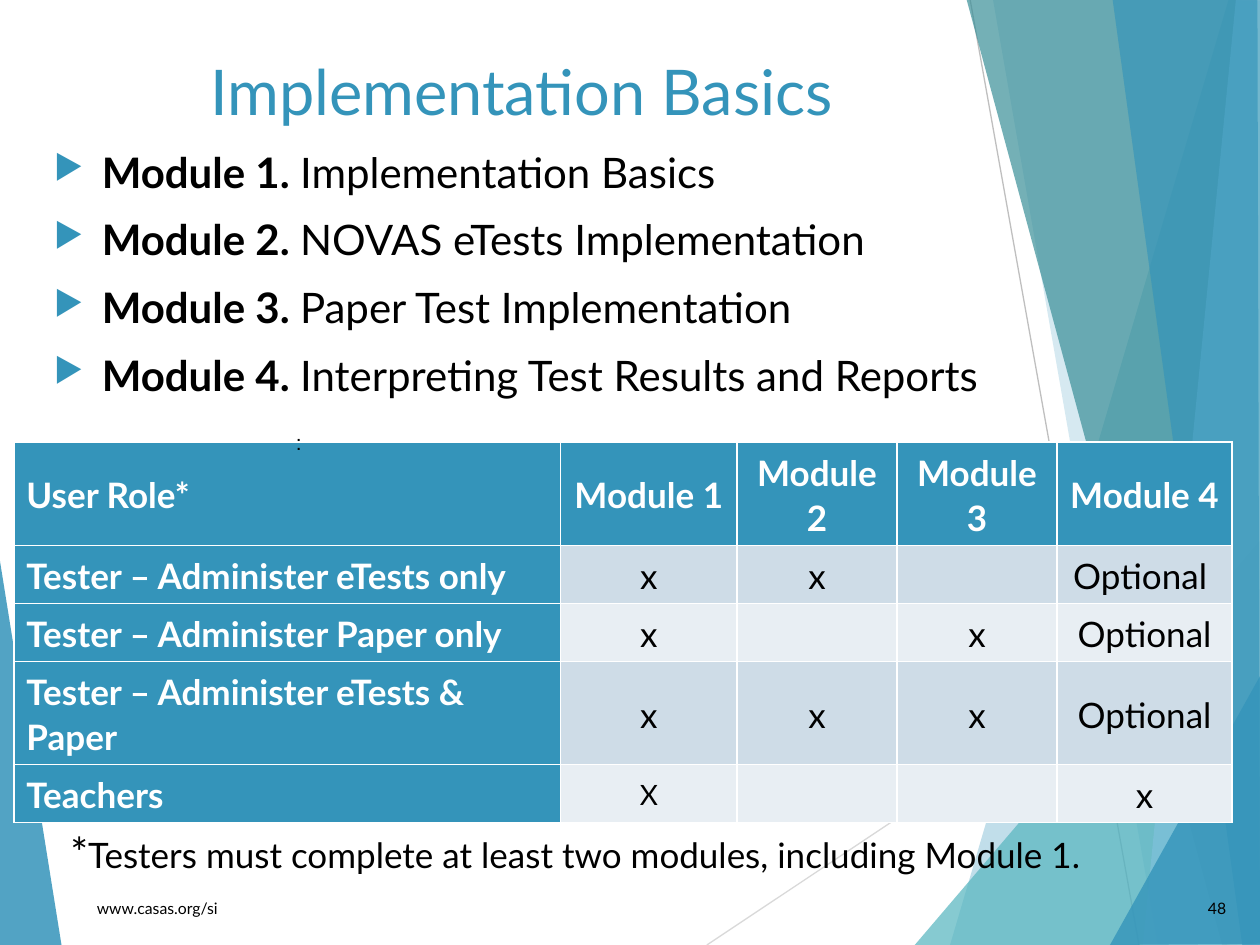
import pptx
import pptx.dml.color
import pptx.enum.shapes
import pptx.enum.text
import pptx.oxml
import pptx.oxml.ns
import pptx.util
from lxml import etree

COLORS = {
    "white": "FFFFFF", "black": "000000", "blue": "3494BA", "teal": "58B6C0",
    "dark teal": "3A8F98", "light blue": "7FC1DB", "light gray": "D9D9D9",
    "gray": "BFBFBF", "odd row": "CEDCE7", "even row": "E8EEF3",
}
FONT = "Lato"
COLUMNS, ROWS = 100, 75  # slide grid, ten units to the inch
LEFT = pptx.enum.text.PP_ALIGN.LEFT
CENTER = pptx.enum.text.PP_ALIGN.CENTER
RIGHT = pptx.enum.text.PP_ALIGN.RIGHT
TOP = pptx.enum.text.MSO_ANCHOR.TOP
MIDDLE = pptx.enum.text.MSO_ANCHOR.MIDDLE

# color, opacity in percent, corners in grid units
LEFT_FACET = ("blue", 85, [(-0.1, 43.9), (4.9, 75.1), (-0.1, 75)])
RIGHT_FACETS = [
    ("blue", 30, [(97.5, 0), (75.4, 75), (100.2, 75.1), (100.1, 0.1)]),
    ("blue", 20, [(78.8, -0.1), (91.9, 75), (100.1, 75), (100.1, -0.1)]),
    ("teal", 72, [(72.6, 75), (100, 42.9), (100.1, 75)]),
    ("dark teal", 70, [(76.7, -0.1), (97, 75), (100.1, 74.9), (100.1, -0.1)]),
    ("light blue", 70, [(98.1, -0.1), (90.7, 75), (100.1, 75), (100, -0.1)]),
    ("blue", 65, [(88.3, -0.1), (98.6, 75), (100, 75), (99.8, -0.1)]),
    ("blue", 80, [(88.1, 75), (100.1, 53.5), (100.1, 74.9)]),
]
MODULES = [
    "Implementation Basics",
    "NOVAS eTests Implementation",
    "Paper Test Implementation",
    "Interpreting Test Results and Reports",
]
ROLE_TABLE = [
    ["User Role*", "Module 1", "Module 2", "Module 3", "Module 4"],
    ["Tester – Administer eTests only", "x", "x", "", "Optional "],
    ["Tester – Administer Paper only", "x", "", "x", "Optional"],
    ["Tester – Administer eTests & Paper", "x", "x", "x", "Optional"],
    ["Teachers", "X", "", "", "x"],
]


def grid(units):
    return pptx.util.Inches(units / 10)


def rgb(name):
    return pptx.dml.color.RGBColor.from_string(COLORS[name])


def style_font(font, size, color="black", name=FONT, bold=None):
    font.name = name
    font.size = pptx.util.Pt(size)
    font.bold = bold
    font.color.rgb = rgb(color)


def add_facet(slide, color, opacity, corners):
    points = [(grid(x), grid(y)) for x, y in corners]
    builder = slide.shapes.build_freeform(*points[0])
    builder.add_line_segments(points[1:], close=True)
    shape = builder.convert_to_shape()
    shape.shadow.inherit = False
    shape.fill.solid()
    shape.fill.fore_color.rgb = rgb(color)
    shape.line.fill.background()
    color_element = shape.fill._xPr.find(".//" + pptx.oxml.ns.qn("a:srgbClr"))
    etree.SubElement(color_element, pptx.oxml.ns.qn("a:alpha"), val=str(opacity * 1000))


def add_thin_line(slide, color, start, end):
    ends = [grid(units) for units in (*start, *end)]
    line = slide.shapes.add_connector(pptx.enum.shapes.MSO_CONNECTOR.STRAIGHT, *ends)
    line.line.color.rgb = rgb(color)
    line.line.width = pptx.util.Pt(0.75)
    etree.SubElement(line._element.spPr, pptx.oxml.ns.qn("a:effectLst"))


def add_text_frame(slide, area, anchor=TOP, wrap=True):
    frame = slide.shapes.add_textbox(*map(grid, area)).text_frame
    frame.word_wrap = wrap
    frame.vertical_anchor = anchor
    return frame


def set_indent(paragraph, left, first=0):
    properties = paragraph._p.get_or_add_pPr()
    properties.set("marL", str(grid(left)))
    properties.set("indent", str(grid(first)))


def add_label(slide, area, text, size, color="black", font=FONT, align=LEFT,
              anchor=MIDDLE, wrap=True, indent=0):
    paragraph = add_text_frame(slide, area, anchor, wrap).paragraphs[0]
    set_indent(paragraph, indent)
    paragraph.alignment = align
    paragraph.add_run().text = text
    style_font(paragraph.font, size, color, font)


def add_bullet(paragraph):
    properties = paragraph._p.get_or_add_pPr()
    color = etree.SubElement(properties, pptx.oxml.ns.qn("a:buClr"))
    etree.SubElement(color, pptx.oxml.ns.qn("a:srgbClr"), val=COLORS["blue"])
    etree.SubElement(properties, pptx.oxml.ns.qn("a:buSzPct"), val="80000")
    etree.SubElement(properties, pptx.oxml.ns.qn("a:buChar"), char="▶")


def add_module_list(slide, area):
    frame = add_text_frame(slide, area)
    for number, name in enumerate(MODULES, start=1):
        paragraph = frame.paragraphs[0] if number == 1 else frame.add_paragraph()
        set_indent(paragraph, 3.8, -3.8)
        add_bullet(paragraph)
        if number > 1:
            paragraph.space_before = pptx.util.Pt(10)
        style_font(paragraph.font, 24)
        label = paragraph.add_run()
        label.text = f"Module {number}. "
        label.font.bold = True
        paragraph.add_run().text = name


def add_footnote(slide, area):
    """The asterisk is larger than the sentence after it."""
    paragraph = add_text_frame(slide, area).paragraphs[0]
    set_indent(paragraph, 2.3)
    sentence = "Testers must complete at least two modules, including Module 1."
    for text, size in (("*", 24), (sentence, 20)):
        run = paragraph.add_run()
        run.text = text
        style_font(run.font, size)


def add_cell_borders(cell):
    properties = cell._tc.get_or_add_tcPr()
    for position, side in enumerate(("a:lnL", "a:lnR", "a:lnT", "a:lnB")):
        border = pptx.oxml.parse_xml(
            f'<{side} {pptx.oxml.ns.nsdecls("a")} w="12700"><a:solidFill>'
            f'<a:srgbClr val="{COLORS["white"]}"/></a:solidFill></{side}>')
        properties.insert(position, border)


def fill_cell(cell, text, row, column):
    is_heading = row == 0 or column == 0
    band = "odd row" if row % 2 else "even row"
    cell.fill.solid()
    cell.fill.fore_color.rgb = rgb("blue" if is_heading else band)
    cell.vertical_anchor = MIDDLE
    add_cell_borders(cell)
    if not text:
        return
    paragraph = cell.text_frame.paragraphs[0]
    paragraph.alignment = CENTER if column else LEFT
    paragraph.line_spacing = 1.07
    paragraph.space_after = pptx.util.Pt(8)
    paragraph.add_run().text = text
    style_font(paragraph.font, 16 if text == "X" else 20,
               "white" if is_heading else "black", bold=is_heading)


def add_role_table(slide, area, widths, heights):
    table = slide.shapes.add_table(len(heights), len(widths), *map(grid, area)).table
    for column, width in zip(table.columns, widths):
        column.width = grid(width)
    for row, height in zip(table.rows, heights):
        row.height = grid(height)
    for row, texts in enumerate(ROLE_TABLE):
        for column, text in enumerate(texts):
            fill_cell(table.cell(row, column), text, row, column)


def main():
    presentation = pptx.Presentation()
    presentation.slide_width, presentation.slide_height = grid(COLUMNS), grid(ROWS)
    slide = presentation.slides.add_slide(presentation.slide_layouts[6])
    add_facet(slide, *LEFT_FACET)
    add_thin_line(slide, "light gray", (56.1, 75), (100.1, 45.7))
    add_thin_line(slide, "gray", (77, 0), (90.4, 75))
    for facet in RIGHT_FACETS:
        add_facet(slide, *facet)
    add_label(slide, (-8.4, 3.7, 92.5, 10.8), "Implementation Basics", 36, "blue",
              anchor=TOP, indent=24.1)
    add_module_list(slide, (3.3, 11.1, 95, 25.4))
    add_label(slide, (6.7, 70.1, 50.6, 4), "www.casas.org/si", 9)
    add_role_table(slide, (1.1, 35.1, 96.8, 30), (43.4, 14, 12.7, 12.7, 13.9),
                   (8.2, 4.6, 4.6, 8.2, 4.6))
    add_label(slide, (22.5, 33.6, 2.5, 3), ":", 12, font="Arial", wrap=False)
    add_footnote(slide, (2.3, 65.1, 103.3, 5))
    add_label(slide, (92.7, 70.1, 5.6, 4), "48", 9, align=RIGHT)
    presentation.save("out.pptx")


if __name__ == "__main__":
    main()
